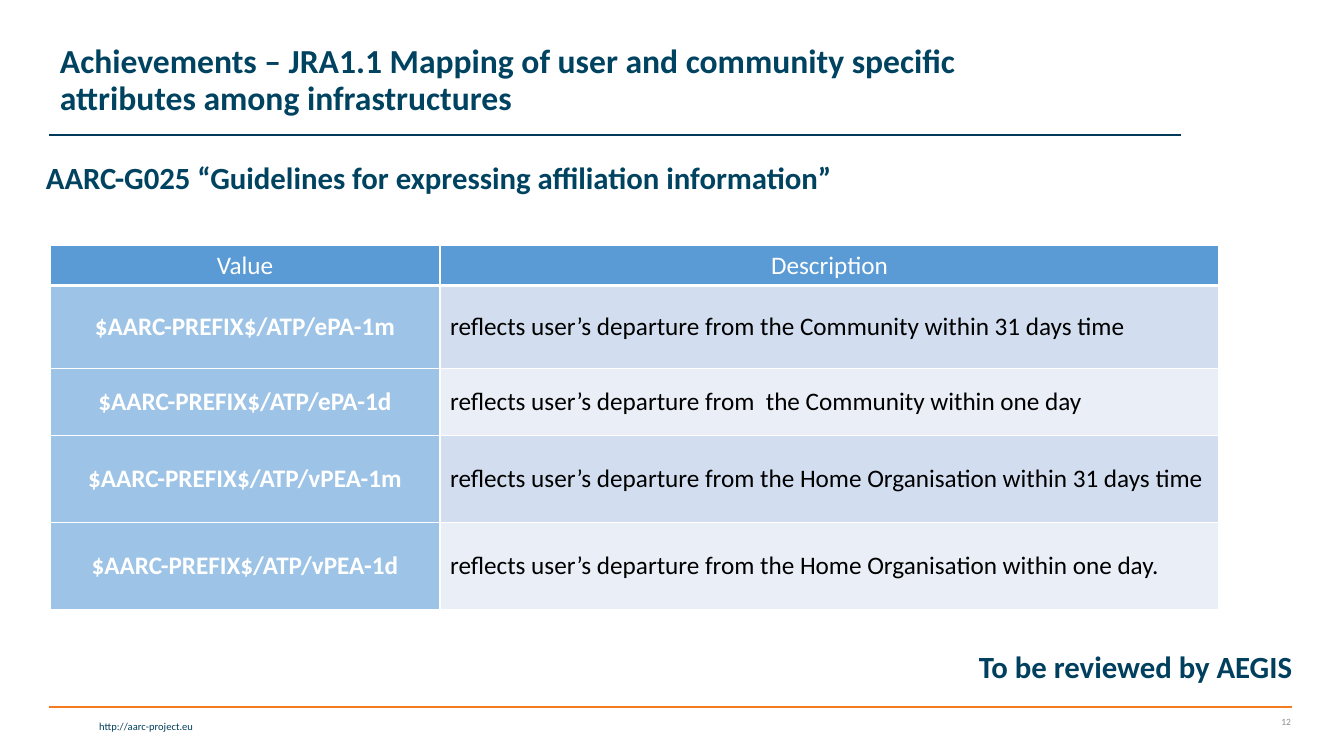
from lxml import etree
from pptx import Presentation
from pptx.dml.color import RGBColor
from pptx.enum.shapes import MSO_CONNECTOR as Connector
from pptx.enum.text import MSO_ANCHOR as Anchor, PP_ALIGN as Align
from pptx.oxml import parse_xml
from pptx.oxml.ns import nsdecls, qn
from pptx.util import Emu, Pt

WHITE = RGBColor(0xFF, 0xFF, 0xFF)
BLACK = RGBColor(0x00, 0x00, 0x00)
TITLE_BLUE = RGBColor(0x00, 0x43, 0x61)
REVIEW_BLUE = RGBColor(0x00, 0x3F, 0x5D)
RULE_BLUE = RGBColor(0x00, 0x39, 0x59)
ORANGE = RGBColor(0xF5, 0x7B, 0x20)
GREY = RGBColor(0x8C, 0x8C, 0x8C)
HEADER_FILL = RGBColor(0x5B, 0x9B, 0xD5)
VALUE_FILL = RGBColor(0x9D, 0xC3, 0xE6)
BAND_FILLS = [RGBColor(0xD2, 0xDE, 0xEF), RGBColor(0xEA, 0xEF, 0xF7)]

FONT = "Calibri"
PX = 914400 / 100.8
SLIDE_SIZE = (1344, 756)

RULES = [
    ((49, 707), (1292, 707), ORANGE),
    ((1181, 135), (49, 135), RULE_BLUE),
]
TEXTS = [
    ("http://aarc-project.eu", (3, 715, 200, 23), 7.5, REVIEW_BLUE, False, Align.RIGHT, Anchor.TOP, 1),
    ("12", (1220, 707, 81, 30), 6.8, GREY, False, Align.RIGHT, Anchor.MIDDLE, 1),
    ("Achievements – JRA1.1 Mapping of user and community specific attributes among infrastructures",
     (50, 8, 1059, 146), 24, TITLE_BLUE, True, Align.LEFT, Anchor.MIDDLE, 0.9),
    ("AARC-G025 “Guidelines for expressing affiliation information”",
     (36, 158, 1209, 60), 22, TITLE_BLUE, True, Align.LEFT, Anchor.TOP, 0.9),
    ("To be reviewed by AEGIS", (969, 647, 360, 50), 22, REVIEW_BLUE, True, Align.LEFT, Anchor.TOP, 0.9),
]
TABLE_ORIGIN = (50, 245)
COLUMN_WIDTHS = [390, 779]
ROW_HEIGHTS = [40, 83, 67, 87, 87]
TABLE_ROWS = [
    ("Value", "Description"),
    ("$AARC-PREFIX$/ATP/ePA-1m", "reflects user’s departure from the Community within 31 days time"),
    ("$AARC-PREFIX$/ATP/ePA-1d", "reflects user’s departure from  the Community within one day"),
    ("$AARC-PREFIX$/ATP/vPEA-1m", "reflects user’s departure from the Home Organisation within 31 days time"),
    ("$AARC-PREFIX$/ATP/vPEA-1d", "reflects user’s departure from the Home Organisation within one day."),
]


def px(*lengths):
    return [Emu(round(length * PX)) for length in lengths]


def write(text_frame, text, size, color, bold, align):
    paragraph = text_frame.paragraphs[0]
    paragraph.alignment = align
    run = paragraph.add_run()
    run.text = text
    run.font.name = FONT
    run.font.size = Pt(size)
    run.font.bold = bold
    run.font.color.rgb = color
    return paragraph


def add_rule(slide, start, end, color):
    rule = slide.shapes.add_connector(Connector.STRAIGHT, *px(*start, *end))
    rule.line.color.rgb = color
    rule.line.width = Pt(1)
    etree.SubElement(rule._element.spPr, qn("a:effectLst"))


def add_text(slide, text, box, size, color, bold, align, anchor, spacing):
    text_frame = slide.shapes.add_textbox(*px(*box)).text_frame
    text_frame.word_wrap = True
    text_frame.vertical_anchor = anchor
    paragraph = write(text_frame, text, size, color, bold, align)
    paragraph.line_spacing = spacing


def set_borders(cell, bottom_width):
    properties = cell._tc.get_or_add_tcPr()
    for position, side in enumerate("LRTB"):
        width = Pt(bottom_width if side == "B" else 1)
        properties.insert(position, parse_xml(
            f'<a:ln{side} {nsdecls("a")} w="{width}"><a:solidFill>'
            f'<a:srgbClr val="{WHITE}"/></a:solidFill></a:ln{side}>'))


def cell_style(row, column):
    if row == 0:
        return HEADER_FILL, WHITE, False, Align.CENTER
    if column == 0:
        return VALUE_FILL, WHITE, True, Align.CENTER
    return BAND_FILLS[(row - 1) % 2], BLACK, False, Align.LEFT


def add_values_table(slide):
    table = slide.shapes.add_table(
        len(TABLE_ROWS), len(COLUMN_WIDTHS),
        *px(*TABLE_ORIGIN, sum(COLUMN_WIDTHS), sum(ROW_HEIGHTS))).table
    for column, width in zip(table.columns, px(*COLUMN_WIDTHS)):
        column.width = width
    for row, height in zip(table.rows, px(*ROW_HEIGHTS)):
        row.height = height
    for row, texts in enumerate(TABLE_ROWS):
        for column, text in enumerate(texts):
            cell = table.cell(row, column)
            fill, color, bold, align = cell_style(row, column)
            cell.fill.solid()
            cell.fill.fore_color.rgb = fill
            cell.vertical_anchor = Anchor.MIDDLE
            write(cell.text_frame, text, 18, color, bold, align)
            set_borders(cell, 3 if row == 0 else 1)


def main():
    presentation = Presentation()
    presentation.slide_width, presentation.slide_height = px(*SLIDE_SIZE)
    slide = presentation.slides.add_slide(presentation.slide_layouts[6])
    for rule in RULES:
        add_rule(slide, *rule)
    for text in TEXTS:
        add_text(slide, *text)
    add_values_table(slide)
    presentation.save("out.pptx")


if __name__ == "__main__":
    main()
